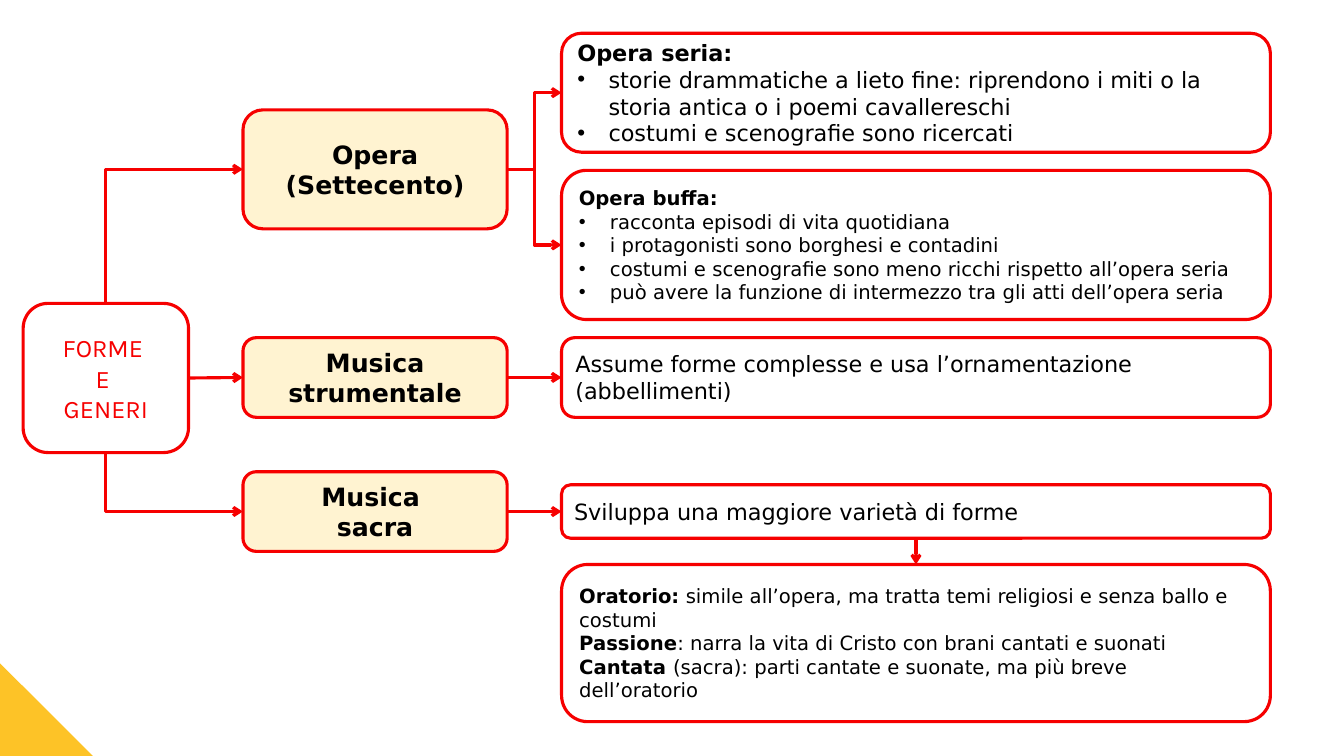
import pptx
import pptx.util
import pptx.dml.color
import pptx.enum.shapes
import pptx.enum.text
import pptx.oxml.ns
import lxml.etree

THEME = {
    "red": "F60000", "cream": "FFF3D1", "gold": "FDC327", "black": "000000",
    "line": 2.25, "large": 18, "mid": 16, "small": 14,
    "sans": "DejaVu Sans", "title": "Karla", "indent": 0.31,
}

SIZE = (13.33, 7.5)
CORNER = 0.92
COLS = {"root": (0.23, 1.64), "genre": (2.41, 2.62), "notes": (5.57, 7.03)}

STYLES = {
    "root": {"size": "large", "name": "title", "color": "red", "align": "CENTER"},
    "genre": {"size": "large", "name": "sans", "color": "black", "align": "CENTER"},
    "notes": {"size": "mid", "name": "sans", "color": "black", "align": "LEFT"},
    "dense": {"size": "small", "name": "sans", "color": "black", "align": "LEFT"},
}

BOXES = {
    "forms": ("root", "root", 3.01, 1.48, ["FORME ", "E ", "GENERI"]),
    "opera": ("genre", "genre", 1.09, 1.18, ["*Opera", "*(Settecento)"]),
    "music": ("genre", "genre", 3.35, 0.79, ["*Musica strumentale"]),
    "sacred": ("genre", "genre", 4.68, 0.79, ["*Musica ", "*sacra"]),
    "seria": ("notes", "notes", 0.33, 1.18, [
        "*Opera seria:",
        "•storie drammatiche a lieto fine: riprendono i miti o la storia antica o i poemi cavallereschi",
        "•costumi e scenografie sono ricercati"]),
    "buffa": ("notes", "dense", 1.69, 1.48, [
        "*Opera buffa:",
        "•racconta episodi di vita quotidiana",
        "•i protagonisti sono borghesi e contadini",
        "•costumi e scenografie sono meno ricchi rispetto all’opera seria",
        "•può avere la funzione di intermezzo tra gli atti dell’opera seria"]),
    "ornate": ("notes", "notes", 3.35, 0.79, [
        "Assume forme complesse e usa l’ornamentazione (abbellimenti)"]),
    "varied": ("notes", "notes", 4.81, 0.53, ["Sviluppa una maggiore varietà di forme"]),
    "kinds": ("notes", "dense", 5.6, 1.56, [
        "*Oratorio:* simile all’opera, ma tratta temi religiosi e senza ballo e costumi",
        "*Passione*: narra la vita di Cristo con brani cantati e suonati",
        "*Cantata *(sacra): parti cantate e suonate, ma più breve dell’oratorio"]),
}

TOP, LEFT, BOTTOM, RIGHT = range(4)
LINKS = [
    ("opera", LEFT, "forms", TOP, "corner"),
    ("sacred", LEFT, "forms", BOTTOM, "corner"),
    ("forms", RIGHT, "music", LEFT, "straight"),
    ("opera", RIGHT, "seria", LEFT, "elbow"),
    ("opera", RIGHT, "buffa", LEFT, "elbow"),
    ("music", RIGHT, "ornate", LEFT, "straight"),
    ("sacred", RIGHT, "varied", LEFT, "straight"),
    ("varied", BOTTOM, "kinds", TOP, "straight"),
]

inch = pptx.util.Inches
kinds = pptx.enum.shapes.MSO_SHAPE
wires = pptx.enum.shapes.MSO_CONNECTOR


def paint(name):
    return pptx.dml.color.RGBColor.from_string(THEME[name])


def tag(base, name, **attrs):
    return lxml.etree.SubElement(base, pptx.oxml.ns.qn("a:" + name), attrs)


def stroke(line):
    line.color.rgb = paint("red")
    line.width = pptx.util.Pt(THEME["line"])


def add_form(slide, kind, frame, fill):
    shape = slide.shapes.add_shape(kind, *map(inch, frame))
    shape.shadow.inherit = False
    if fill:
        shape.fill.solid()
        shape.fill.fore_color.rgb = paint(fill)
    else:
        shape.fill.background()
    return shape


def write_line(para, text, style):
    if text.startswith("•"):
        text = text[1:]
        props = para._p.get_or_add_pPr()
        step = inch(THEME["indent"])
        props.set("marL", str(step))
        props.set("indent", str(-step))
        tag(props, "buFont", typeface="Arial")
        tag(props, "buChar", char="•")
    para.alignment = getattr(pptx.enum.text.PP_ALIGN, style["align"])
    for place, part in enumerate(text.split("*")):
        if part:
            run = para.add_run()
            run.text = part
            looks = {"size": pptx.util.Pt(THEME[style["size"]]),
                     "name": THEME[style["name"]], "bold": place % 2 == 1}
            for key, value in looks.items():
                setattr(run.font, key, value)
            run.font.color.rgb = paint(style["color"])


def add_box(slide, col, look, top, height, lines):
    left, width = COLS[col]
    fill = "cream" if col == "genre" else None
    box = add_form(slide, kinds.ROUNDED_RECTANGLE, (left, top, width, height), fill)
    stroke(box.line)
    frame = box.text_frame
    frame.word_wrap = True
    frame.vertical_anchor = pptx.enum.text.MSO_ANCHOR.MIDDLE
    for place, text in enumerate(lines):
        para = frame.add_paragraph() if place else frame.paragraphs[0]
        write_line(para, text, STYLES[look])
    return box


def add_link(slide, start, exit, end, entry, bend):
    kind = wires.STRAIGHT if bend == "straight" else wires.ELBOW
    link = slide.shapes.add_connector(kind, 0, 0, 0, 0)
    link.begin_connect(start, exit)
    link.end_connect(end, entry)
    stroke(link.line)
    props = link._element.spPr
    if bend == "corner":
        props.find(pptx.oxml.ns.qn("a:prstGeom")).set("prst", "bentConnector2")
    tip = "headEnd" if bend == "corner" else "tailEnd"
    tag(link.line._get_or_add_ln(), tip, type="arrow")
    tag(props, "effectLst")


def main():
    deck = pptx.Presentation()
    deck.slide_width, deck.slide_height = map(inch, SIZE)
    slide = deck.slides.add_slide(deck.slide_layouts[6])
    place = (0, SIZE[1] - CORNER, CORNER, CORNER)
    wedge = add_form(slide, kinds.RIGHT_TRIANGLE, place, "gold")
    wedge.line.fill.background()
    boxes = {name: add_box(slide, *data) for name, data in BOXES.items()}
    for start, exit, end, entry, bend in LINKS:
        add_link(slide, boxes[start], exit, boxes[end], entry, bend)
    deck.save("out.pptx")


if __name__ == "__main__":
    main()
